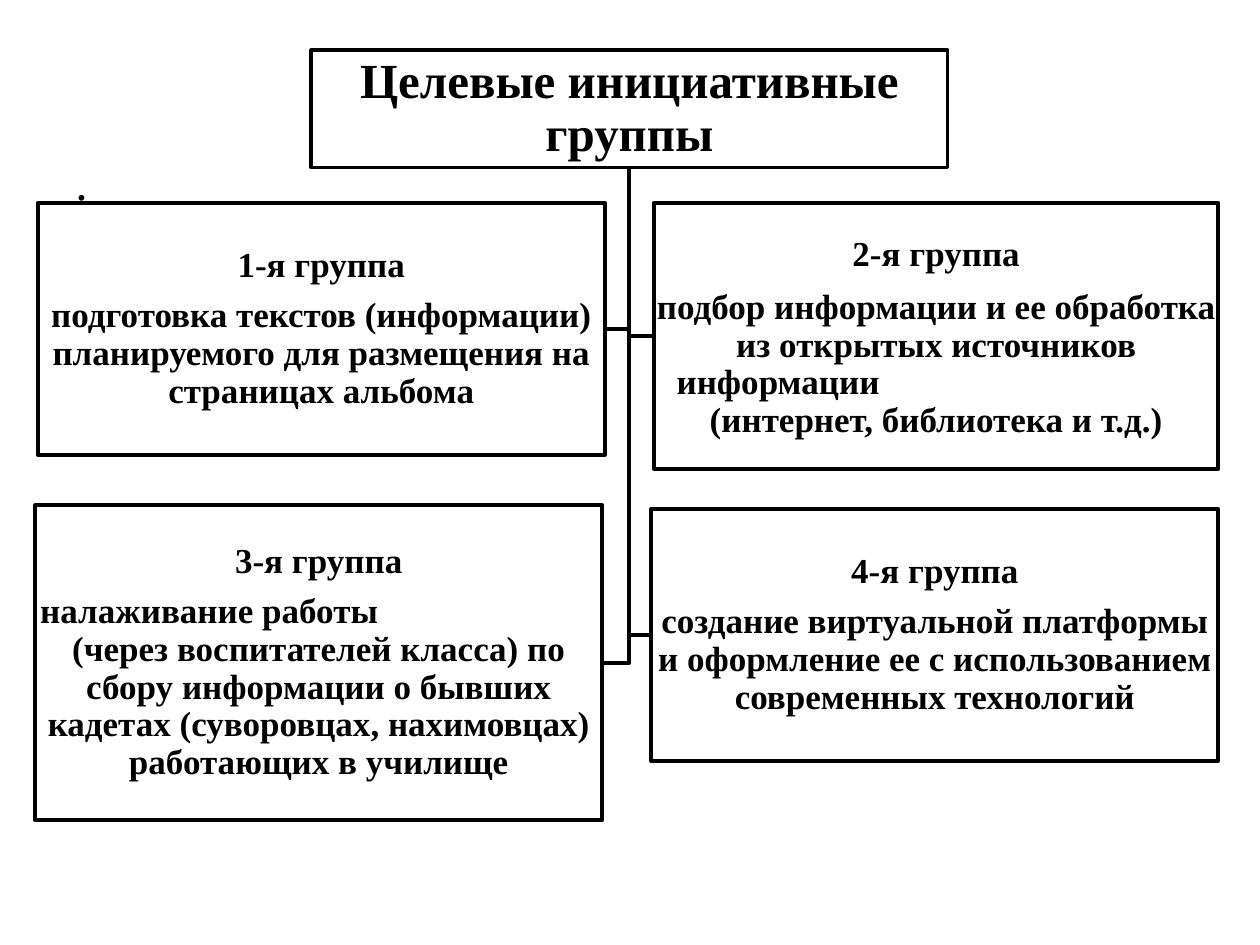
from pptx import Presentation, util as u
from pptx.dml.color import RGBColor
from pptx.enum import shapes, text

Inches, Pt = u.Inches, u.Pt
COLORS = {"ink": "000000"}
FONT = "Times New Roman"
CENTER, LEFT = text.PP_ALIGN.CENTER, text.PP_ALIGN.LEFT
INK = RGBColor.from_string(COLORS["ink"])

TITLE_BOX = (2.47, 0.4, 5.05, 0.93)
# Paragraphs: text, alignment, left indent (in), line spacing, space after (pt)
GROUPS = [
    ((0.3, 1.61, 4.5, 2), [
        ("1-я группа", CENTER, 0, 0.9, 7),
        ("подготовка текстов (информации) планируемого для размещения на "
         "страницах альбома", CENTER, 0, 0.9, 7)]),
    ((5.19, 1.61, 4.48, 2.11), [
        ("2-я группа", CENTER, 0, 1, 9),
        ("подбор информации и ее обработка из открытых источников",
         CENTER, 0, 0.9, 0),
        ("информации", LEFT, 0.17, 0.9, 0),
        ("(интернет, библиотека и т.д.)", CENTER, 0, 0.9, 7)]),
    ((0.28, 4.01, 4.5, 2.5), [
        ("3-я группа", CENTER, 0, 0.9, 7),
        ("налаживание работы", LEFT, 0.03, 0.9, 0),
        ("(через воспитателей класса) по сбору информации о бывших кадетах "
         "(суворовцах, нахимовцах) работающих в училище",
         CENTER, 0, 0.9, 7)]),
    ((5.17, 4.04, 4.5, 2), [
        ("4-я группа", CENTER, 0, 0.9, 7),
        ("создание виртуальной платформы и оформление ее с использованием "
         "современных технологий", CENTER, 0, 0.9, 7)]),
]


def style_outline(sp):
    sp.shadow.inherit = False
    sp.fill.background()
    sp.line.color.rgb = INK
    sp.line.width = Pt(2.25)


def add_run(p, words, size, bold=False, italic=False):
    r = p.add_run()
    r.text = words
    r.font.name = FONT
    r.font.size = Pt(size)
    r.font.bold = bold
    r.font.italic = italic
    r.font.color.rgb = INK


def add_box(s, box, paragraphs, size, inset):
    sp = s.shapes.add_shape(shapes.MSO_SHAPE.RECTANGLE, *map(Inches, box))
    style_outline(sp)
    tf = sp.text_frame
    tf.word_wrap = True
    tf.vertical_anchor = text.MSO_ANCHOR.MIDDLE
    tf.margin_left = tf.margin_right = Inches(inset)
    tf.margin_top = tf.margin_bottom = Inches(inset)
    for i, (words, align, indent, spacing, after) in enumerate(paragraphs):
        p = tf.add_paragraph() if i else tf.paragraphs[0]
        if indent:
            p._p.get_or_add_pPr().set("marL", str(Inches(indent)))
        p.alignment = align
        p.line_spacing = spacing
        p.space_after = Pt(after)
        add_run(p, words, size, bold=True)


def add_branch(s, parent, child):
    """Elbow from the parent's bottom centre to the child's facing side."""
    trunk_x = parent[0] + parent[2] / 2
    top = parent[1] + parent[3]
    left, y = child[0], child[1] + child[3] / 2
    side_x = left if left > trunk_x else left + child[2]
    fb = s.shapes.build_freeform(Inches(trunk_x), Inches(top))
    fb.add_line_segments([(Inches(trunk_x), Inches(y)),
                          (Inches(side_x), Inches(y))], close=False)
    style_outline(fb.convert_to_shape())


def add_body_text(s, box):
    tf = s.shapes.add_textbox(*map(Inches, box)).text_frame
    tf.word_wrap = True
    p = tf.paragraphs[0]
    p.alignment = text.PP_ALIGN.JUSTIFY
    add_run(p, ".", 28, italic=True)


def add_group_chart(s):
    for box, _ in reversed(GROUPS):
        add_branch(s, TITLE_BOX, box)
    add_box(s, TITLE_BOX,
            [("Целевые инициативные группы", CENTER, 0, 0.9, 10)], 28, 0.02)
    for box, paragraphs in GROUPS:
        add_box(s, box, paragraphs, 20, 0.01)


def main():
    prs = Presentation()
    prs.slide_width, prs.slide_height = Inches(10), Inches(7.5)
    s = prs.slides.add_slide(prs.slide_layouts[6])
    add_body_text(s, (0.51, 1.15, 9, 5.86))
    add_group_chart(s)
    prs.save("out.pptx")


if __name__ == "__main__":
    main()
